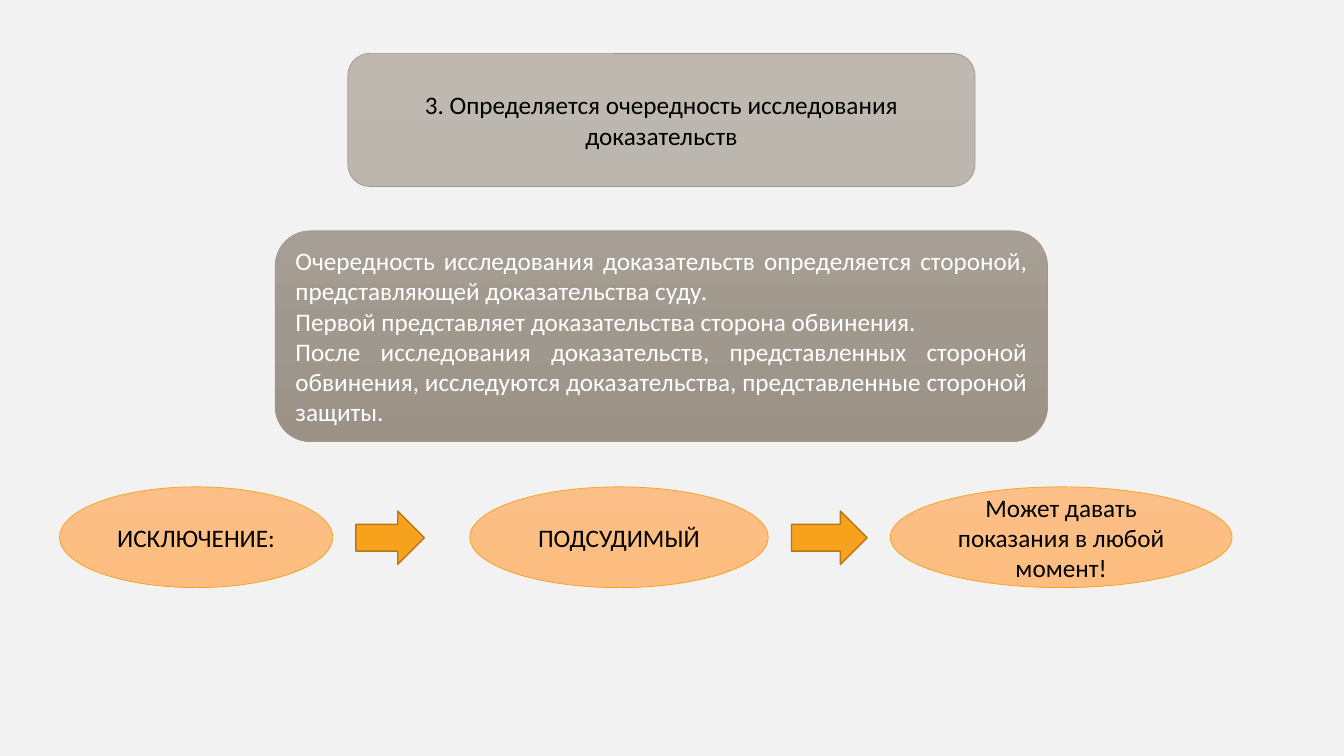
from copy import deepcopy
from dataclasses import dataclass

from pptx import Presentation
from pptx.dml.color import RGBColor
from pptx.enum.shapes import MSO_SHAPE as Shape
from pptx.enum.text import MSO_ANCHOR as Anchor, PP_ALIGN as Align
from pptx.oxml.ns import qn
from pptx.util import Emu, Pt

PX = 9144  # EMU per px, 100 px to the inch
COLORS = {
    "page": "F2F2F2",
    "black": "000000",
    "white": "FFFFFF",
    "stone": "A0988C",
    "stone_light": "BEB8B1",
    "stone_pale": "BBB6AE",
    "stone_top": "A79F95",
    "stone_bottom": "9B9285",
    "orange": "F6A21D",
    "orange_dark": "B67815",
    "peach_top": "FCBF87",
    "peach_bottom": "FDBD80",
}
ROW_MIDDLE = 533


@dataclass
class Block:
    kind: Shape
    left: int
    top: int
    width: int
    height: int
    fill: tuple[str, ...]
    line: str
    line_width: float = 0.5
    text: tuple[str, ...] = ()
    color: str = "black"
    align: Align = Align.CENTER


def rgb(name: str) -> RGBColor:
    return RGBColor.from_string(COLORS[name])


def fill_block(shape, names: tuple[str, ...]) -> None:
    """Fill plainly for one colour, or with evenly spaced stops downwards."""
    if len(names) == 1:
        shape.fill.solid()
        shape.fill.fore_color.rgb = rgb(names[0])
        return
    shape.fill.gradient()
    shape.fill.gradient_angle = 270
    stop_list = shape.element.spPr.find(f".//{qn('a:gsLst')}")
    while len(stop_list) < len(names):
        stop_list.append(deepcopy(stop_list[0]))
    for index, (stop, name) in enumerate(zip(shape.fill.gradient_stops, names)):
        stop.position = index / (len(names) - 1)
        stop.color.rgb = rgb(name)


def write_text(shape, block: Block) -> None:
    frame = shape.text_frame
    frame.word_wrap = True
    frame.vertical_anchor = Anchor.MIDDLE
    frame.text = "\n".join(block.text)
    for para in frame.paragraphs:
        para.alignment = block.align
        para.font.name = "Calibri"
        para.font.size = Pt(18)
        para.font.color.rgb = rgb(block.color)


def draw_block(page, block: Block) -> None:
    edges = (block.left, block.top, block.width, block.height)
    shape = page.shapes.add_shape(block.kind, *(Emu(edge * PX) for edge in edges))
    shape.shadow.inherit = False
    fill_block(shape, block.fill)
    shape.line.color.rgb = rgb(block.line)
    shape.line.width = Pt(block.line_width)
    if block.text:
        write_text(shape, block)


def oval(left: int, width: int, text: str) -> Block:
    height = 100
    return Block(Shape.OVAL, left, ROW_MIDDLE - height // 2, width, height,
                 ("peach_top", "peach_bottom"), "orange", text=(text,))


def arrow(left: int, width: int) -> Block:
    height = 53
    return Block(Shape.RIGHT_ARROW, left, ROW_MIDDLE - height // 2, width, height,
                 ("orange",), "orange_dark", line_width=1)


BLOCKS = [
    Block(Shape.ROUNDED_RECTANGLE, 345, 53, 622, 132,
          ("stone_light", "stone_pale"), "stone",
          text=("3. Определяется очередность исследования доказательств",)),
    Block(Shape.ROUNDED_RECTANGLE, 273, 229, 766, 209,
          ("stone_top", "stone", "stone_bottom"), "stone",
          text=(
              "Очередность исследования доказательств определяется стороной, "
              "представляющей доказательства суду.",
              "Первой представляет доказательства сторона обвинения. ",
              "После исследования доказательств, представленных стороной обвинения, "
              "исследуются доказательства, представленные стороной защиты.",
          ),
          color="white", align=Align.JUSTIFY),
    oval(59, 271, "ИСКЛЮЧЕНИЕ:"),
    arrow(353, 68),
    oval(466, 296, "ПОДСУДИМЫЙ"),
    arrow(785, 75),
    oval(883, 339, "Может давать показания в любой момент!"),
]


def main() -> None:
    deck = Presentation()
    deck.slide_width, deck.slide_height = Emu(1333 * PX), Emu(750 * PX)
    page = deck.slides.add_slide(deck.slide_layouts[6])
    page.background.fill.solid()
    page.background.fill.fore_color.rgb = rgb("page")
    for block in BLOCKS:
        draw_block(page, block)
    deck.save("out.pptx")


if __name__ == "__main__":
    main()
